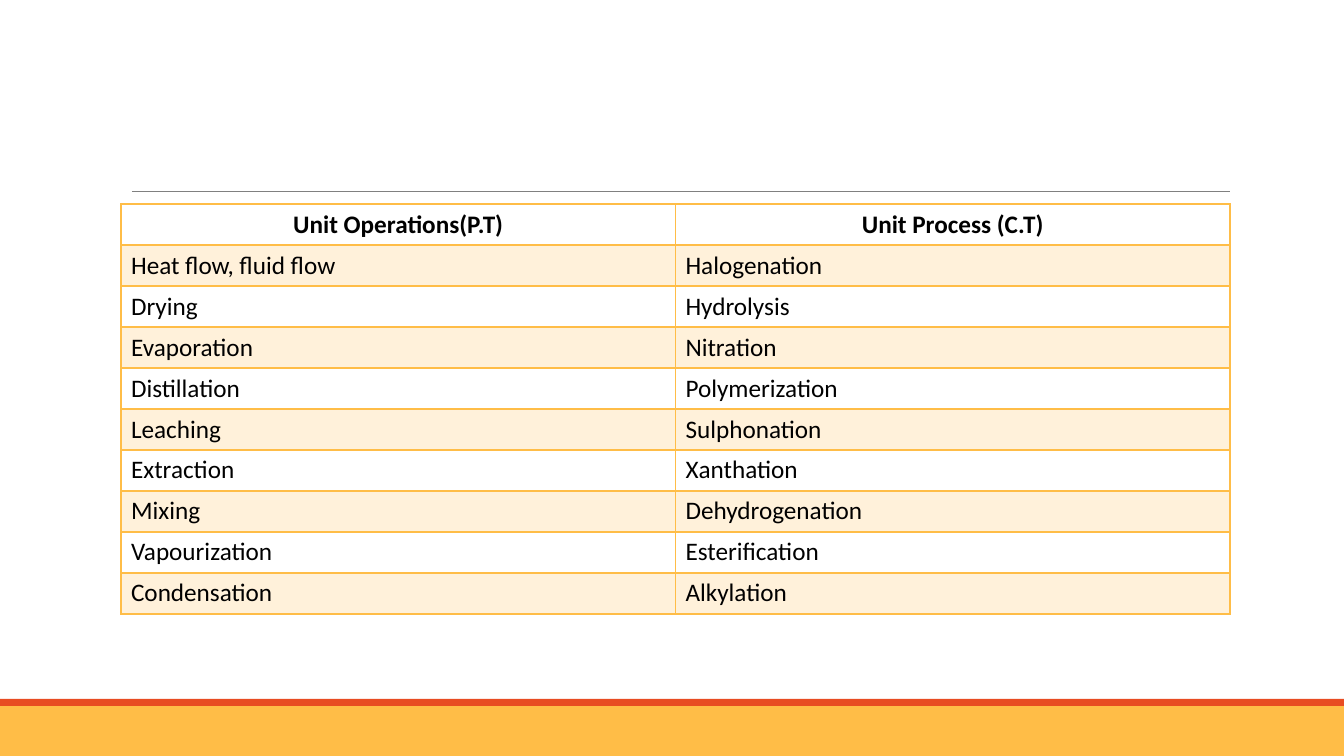
from lxml import etree
from pptx import Presentation
from pptx import util as u
from pptx.dml.color import RGBColor
from pptx.enum import shapes, text
from pptx.oxml import ns

SCALE = 914400 / 100.8
PAGE_WIDTH, PAGE_HEIGHT = 1344, 756
COLORS = {"amber": "FFBD47", "red": "E84C22", "rule": "808080", "ink": "000000"}
ROWS = [
    ("Unit Operations(P.T)", "Unit Process (C.T)"),
    ("Heat flow, fluid flow", "Halogenation"),
    ("Drying", "Hydrolysis"),
    ("Evaporation", "Nitration"),
    ("Distillation", "Polymerization"),
    ("Leaching", "Sulphonation"),
    ("Extraction", "Xanthation"),
    ("Mixing", "Dehydrogenation"),
    ("Vapourization", "Esterification"),
    ("Condensation", "Alkylation"),
]


def px(length):
    return u.Emu(round(length * SCALE))


def color(name):
    return RGBColor.from_string(COLORS[name])


def add_band(page, box, fill):
    band = page.shapes.add_shape(shapes.MSO_SHAPE.RECTANGLE, *map(px, box))
    band.shadow.inherit = False
    band.fill.solid()
    band.fill.fore_color.rgb = color(fill)
    band.line.fill.background()


def add_footer(page, box):
    left, top, width, height = box
    stripe = 7
    add_band(page, (left, top + stripe, width, height - stripe), "amber")
    add_band(page, (left, top, width, stripe), "red")


def add_rule(page, left, top, width):
    rule = page.shapes.add_connector(
        shapes.MSO_CONNECTOR.STRAIGHT, px(left), px(top), px(left + width), px(top))
    rule.line.color.rgb = color("rule")
    rule.line.width = u.Pt(0.5)
    etree.SubElement(rule._element.spPr, ns.qn("a:effectLst"))


def add_border(cell, side, points):
    border = etree.SubElement(
        cell._tc.get_or_add_tcPr(), ns.qn(f"a:ln{side}"), w=str(u.Pt(points)))
    fill = etree.SubElement(border, ns.qn("a:solidFill"))
    etree.SubElement(fill, ns.qn("a:srgbClr"), val=COLORS["amber"])


def format_cell(cell, words, row):
    header = row == 0
    for side in "LRTB":
        thick = (header and side == "B") or (row == 1 and side == "T")
        add_border(cell, side, 2 if thick else 1)
    if row % 2:
        cell.fill.solid()
        cell.fill.fore_color.rgb = color("amber")
        tint = cell._tc.tcPr.find(f"{ns.qn('a:solidFill')}/{ns.qn('a:srgbClr')}")
        etree.SubElement(tint, ns.qn("a:alpha"), val="20000")
    else:
        cell.fill.background()
    para = cell.text_frame.paragraphs[0]
    para.alignment = text.PP_ALIGN.CENTER if header else text.PP_ALIGN.LEFT
    span = para.add_run()
    span.text = words
    for name, value in {"name": "Calibri", "size": u.Pt(18), "bold": header}.items():
        setattr(span.font, name, value)
    span.font.color.rgb = color("ink")


def add_unit_table(page, box):
    table = page.shapes.add_table(len(ROWS), len(ROWS[0]), *map(px, box)).table
    for column in table.columns:
        column.width = px(box[2] / len(ROWS[0]))
    for row, entries in enumerate(ROWS):
        table.rows[row].height = px(box[3] / len(ROWS))
        for column, words in enumerate(entries):
            format_cell(table.cell(row, column), words, row)


def main():
    deck = Presentation()
    deck.slide_width, deck.slide_height = px(PAGE_WIDTH), px(PAGE_HEIGHT)
    page = deck.slides.add_slide(deck.slide_layouts[6])
    add_footer(page, (0, 699, PAGE_WIDTH, 57))
    add_rule(page, 132, 191, 1098)
    add_unit_table(page, (121, 204, 1109, 410))
    deck.save("out.pptx")


if __name__ == "__main__":
    main()
